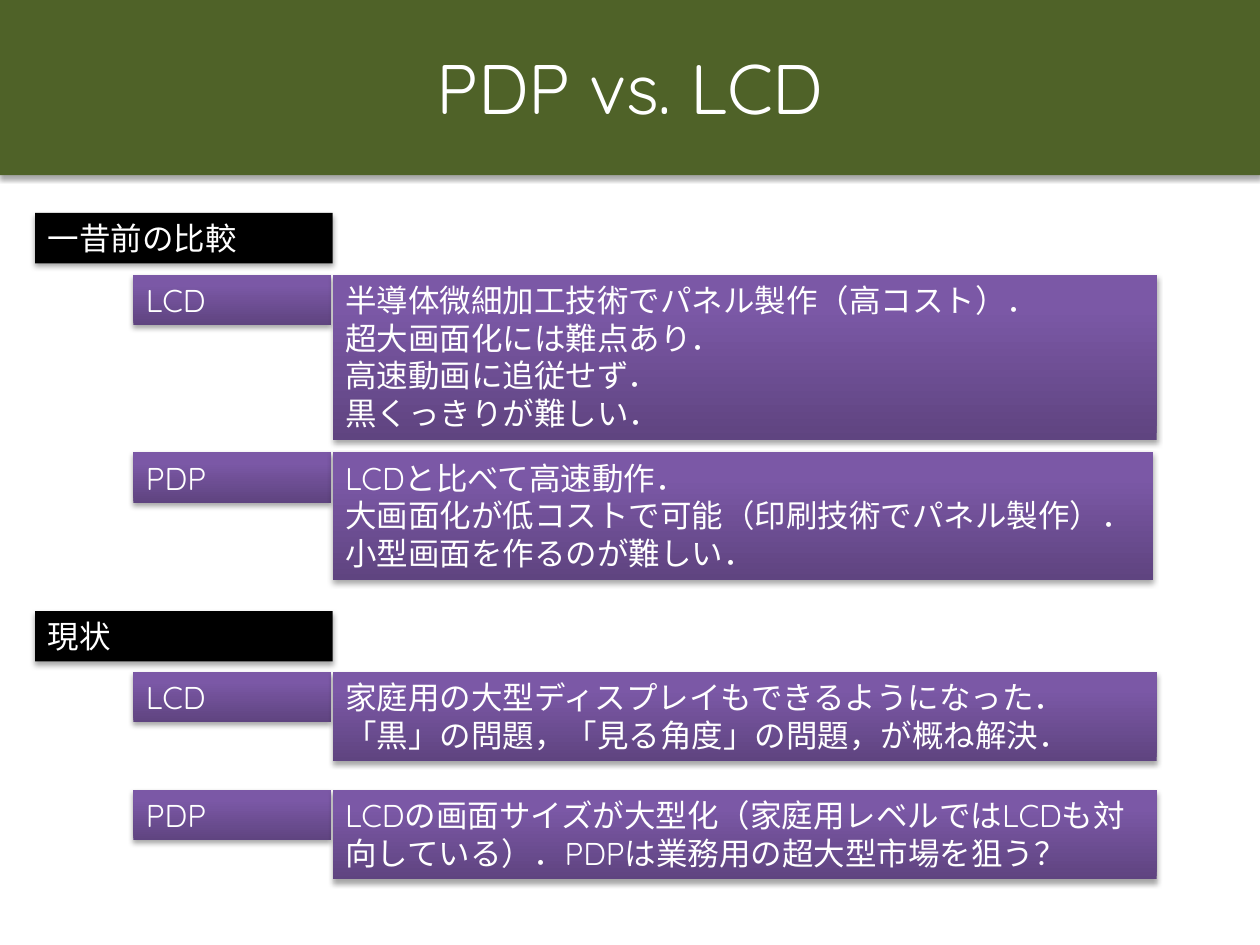
from copy import deepcopy
from dataclasses import dataclass

from lxml.etree import SubElement
from pptx import Presentation
from pptx.dml.color import RGBColor as RGB
from pptx.enum.shapes import MSO_SHAPE as Shape
from pptx.enum.text import MSO_ANCHOR as Anchor, MSO_AUTO_SIZE as AutoSize, PP_ALIGN as Align
from pptx.oxml.ns import qn
from pptx.util import Emu, Pt

PX = 9144  # EMU, 100 px to the inch


def px(*lengths):
    return [Emu(length * PX) for length in lengths]


@dataclass(frozen=True)
class Theme:
    font: str = "Quicksand"
    title_size: int = 40
    text_size: int = 18
    text: str = "FFFFFF"
    band: str = "4F6228"
    heading: str = "000000"
    gradient: tuple = ((0, "5F4480"), (0.8, "7B58A6"), (1, "7C57A8"))


class SlideBuilder:
    TITLE_ONLY = 5
    LABEL_LEFT, LABEL_WIDTH = 106, 157
    DETAIL_LEFT, DETAIL_WIDTH = 264, 654

    def __init__(self, deck, theme):
        self.theme = theme
        self.page = deck.slides.add_slide(deck.slide_layouts[self.TITLE_ONLY])

    def _write(self, shape, lines, size, align=Align.LEFT, wrap=True):
        frame = shape.text_frame
        frame.text = "\n".join(lines)
        frame.word_wrap = wrap
        frame.auto_size = AutoSize.SHAPE_TO_FIT_TEXT
        frame.vertical_anchor = Anchor.TOP
        for para in frame.paragraphs:
            para.alignment = align
            font = para.font
            font.name, font.size = self.theme.font, Pt(size)
            font.color.rgb = RGB.from_string(self.theme.text)

    def _box(self, left, top, width, height, color=None):
        """Add a shadowed rectangle, with the theme gradient if no color is given."""
        box = self.page.shapes.add_shape(Shape.RECTANGLE, *px(left, top, width, height))
        box.line.fill.background()
        if color:
            box.fill.solid()
            box.fill.fore_color.rgb = RGB.from_string(color)
        else:
            self._fill_gradient(box)
        self._cast_shadow(box)
        return box

    def _fill_gradient(self, box):
        box.fill.gradient()
        box.fill.gradient_angle = 90
        stop_list = box._element.spPr.find(".//" + qn("a:gsLst"))
        stop_list.append(deepcopy(stop_list[0]))
        for stop, (position, color) in zip(box.fill.gradient_stops, self.theme.gradient):
            stop.position = position
            stop.color.rgb = RGB.from_string(color)

    def _cast_shadow(self, box):
        box.shadow.inherit = False
        effects = box._element.spPr.find(qn("a:effectLst"))
        shadow = SubElement(effects, qn("a:outerShdw"), blurRad="40000", dist="23000",
                            dir="5400000", rotWithShape="0")
        color = SubElement(shadow, qn("a:srgbClr"), val="000000")
        SubElement(color, qn("a:alpha"), val="35000")

    def title(self, text):
        band = self._box(0, 0, 1000, 139, self.theme.band)
        title = self.page.shapes.title
        title.left, title.top, title.width, title.height = px(0, 30, 1000, 77)
        self._write(title, [text], self.theme.title_size, Align.CENTER)
        title._element.addprevious(band._element)

    def heading(self, top, text):
        box = self._box(28, top, 236, 40, self.theme.heading)
        self._write(box, [text], self.theme.text_size)

    def row(self, top, label, lines, line_count, wrap=True):
        """Add a label and, to its right, a detail box of line_count lines."""
        box = self._box(self.LABEL_LEFT, top, self.LABEL_WIDTH, 40)
        self._write(box, [label], self.theme.text_size)
        width = self.DETAIL_WIDTH if wrap else self.DETAIL_WIDTH - 3
        detail = self._box(self.DETAIL_LEFT, top, width, 11 + 30 * line_count)
        self._write(detail, lines, self.theme.text_size, wrap=wrap)


def main():
    deck = Presentation()
    deck.slide_width, deck.slide_height = px(1000, 750)
    slide = SlideBuilder(deck, Theme())

    slide.title("PDP vs. LCD")

    slide.heading(169, "一昔前の比較")
    slide.row(218, "LCD", [
        "半導体微細加工技術でパネル製作（高コスト）．",
        "超大画面化には難点あり．",
        "高速動画に追従せず．",
        "黒くっきりが難しい．",
    ], 4)
    slide.row(359, "PDP", [
        "LCDと比べて高速動作．",
        "大画面化が低コストで可能（印刷技術でパネル製作）．",
        "小型画面を作るのが難しい．",
    ], 3, wrap=False)

    slide.heading(485, "現状")
    slide.row(533, "LCD", [
        "家庭用の大型ディスプレイもできるようになった．",
        "「黒」の問題，「見る角度」の問題，が概ね解決．",
    ], 2)
    slide.row(627, "PDP", [
        "LCDの画面サイズが大型化（家庭用レベルではLCDも対向している）．"
        "PDPは業務用の超大型市場を狙う？",
    ], 2)

    deck.save("out.pptx")


if __name__ == "__main__":
    main()
